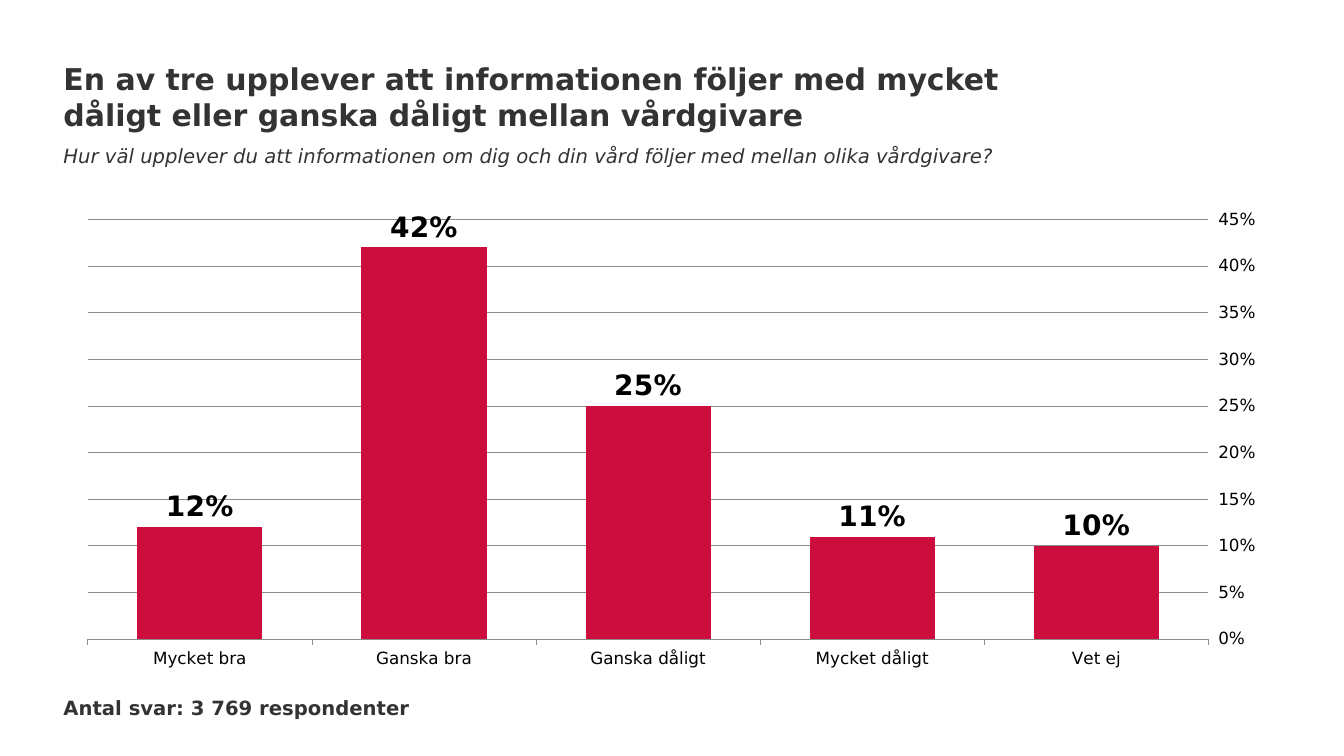
from pptx import Presentation
from pptx import util as u
from pptx.chart.data import CategoryChartData
from pptx.dml.color import RGBColor
from pptx.enum import chart as ch
from pptx.enum import text as tx

FONT = "DejaVu Sans"
RED = RGBColor(0xCB, 0x0E, 0x3E)
DARK = RGBColor(0x33, 0x33, 0x33)
BLACK = RGBColor(0, 0, 0)
GREY = RGBColor(0x8C, 0x8C, 0x8C)
LEFT = u.Cm(1.6)
WIDTH = u.Cm(30.66)
ANSWERS = {
    "Mycket bra": 0.12,
    "Ganska bra": 0.42,
    "Ganska dåligt": 0.25,
    "Mycket dåligt": 0.11,
    "Vet ej": 0.1,
}


def style(font, size, color, bold=False, italic=False):
    """Set the face, size, colour and weight of a font."""
    font.name = FONT
    font.size = u.Pt(size)
    font.color.rgb = color
    font.bold = bold
    font.italic = italic


def write(shape, words, size, bold=False, italic=False):
    """Fill a shape with one left-aligned paragraph without margins."""
    frame = shape.text_frame
    frame.text = words
    frame.word_wrap = True
    frame.auto_size = tx.MSO_AUTO_SIZE.NONE
    frame.vertical_anchor = tx.MSO_ANCHOR.TOP
    frame.margin_left = frame.margin_right = 0
    frame.margin_top = frame.margin_bottom = 0
    para = frame.paragraphs[0]
    para.alignment = tx.PP_ALIGN.LEFT
    style(para.font, size, DARK, bold, italic)


def add_title(slide, words):
    """Move and fill the title placeholder."""
    title = slide.shapes.title
    title.left, title.top = LEFT, u.Cm(1.52)
    title.width, title.height = u.Cm(24), u.Cm(1.83)
    write(title, words, 21.4, bold=True)


def add_note(slide, words, top, width, **look):
    """Add a single line of text at the left margin."""
    box = slide.shapes.add_textbox(LEFT, top, width, u.Cm(0.61))
    write(box, words, 14, **look)


def rule(line):
    """Make a chart line thin and grey."""
    line.color.rgb = GREY
    line.width = u.Pt(0.5)


def add_bars(slide):
    """Add the column chart of answers with its value labels at the right."""
    data = CategoryChartData(number_format="0%")
    data.categories = list(ANSWERS)
    data.add_series("Series 1", list(ANSWERS.values()))
    frame = slide.shapes.add_chart(
        ch.XL_CHART_TYPE.COLUMN_CLUSTERED, LEFT, u.Cm(5.04), WIDTH, u.Cm(12.06), data
    )
    chart = frame.chart
    chart.has_legend = False
    chart.has_title = False
    style(chart.font, 12, BLACK)

    cats = chart.category_axis
    cats.tick_label_position = ch.XL_TICK_LABEL_POSITION.LOW
    rule(cats.format.line)
    vals = chart.value_axis
    vals.minimum_scale, vals.maximum_scale, vals.major_unit = 0, 0.45, 0.05
    vals.tick_label_position = ch.XL_TICK_LABEL_POSITION.HIGH
    vals.tick_labels.number_format = "0%"
    vals.tick_labels.number_format_is_linked = False
    vals.format.line.fill.background()
    rule(vals.major_gridlines.format.line)
    for axis in (cats, vals):
        axis.major_tick_mark = ch.XL_TICK_MARK.OUTSIDE
        axis.minor_tick_mark = ch.XL_TICK_MARK.NONE
        style(axis.tick_labels.font, 12, BLACK)

    plot = chart.plots[0]
    plot.gap_width = 79
    plot.vary_by_categories = False
    bars = plot.series[0]
    bars.format.fill.solid()
    bars.format.fill.fore_color.rgb = RED
    labels = bars.data_labels
    labels.show_value = True
    labels.position = ch.XL_LABEL_POSITION.OUTSIDE_END
    labels.number_format = "0%"
    labels.number_format_is_linked = False
    style(labels.font, 20, BLACK, bold=True)


def main():
    """Build the slide and save it."""
    deck = Presentation()
    deck.slide_width, deck.slide_height = u.Cm(33.87), u.Cm(19.05)
    slide = deck.slides.add_slide(deck.slide_layouts[5])
    add_bars(slide)
    add_note(slide, "Antal svar: 3 769 respondenter", u.Cm(17.53), u.Cm(9.96), bold=True)
    add_note(
        slide,
        "Hur väl upplever du att informationen om dig och din vård "
        "följer med mellan olika vårdgivare?",
        u.Cm(3.63),
        WIDTH,
        italic=True,
    )
    add_title(
        slide,
        "En av tre upplever att informationen följer med mycket dåligt "
        "eller ganska dåligt mellan vårdgivare",
    )
    deck.save("out.pptx")


if __name__ == "__main__":
    main()
